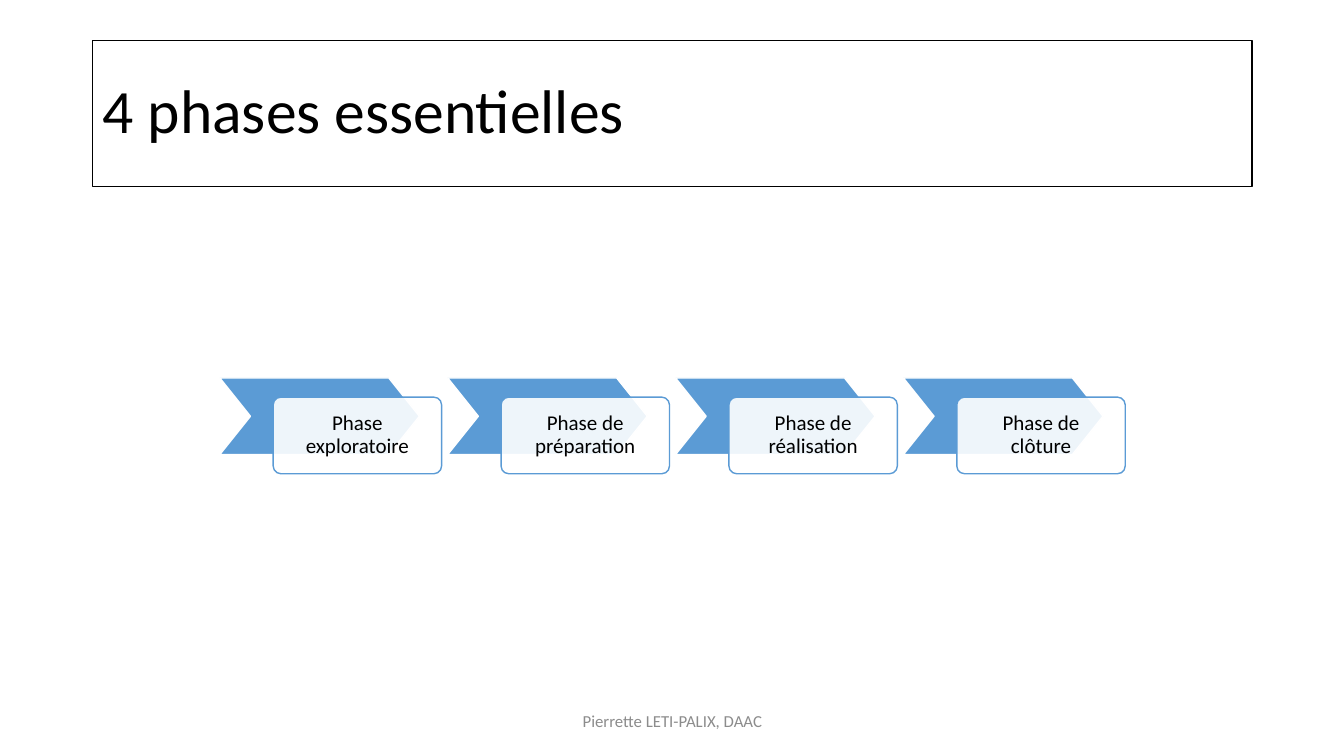
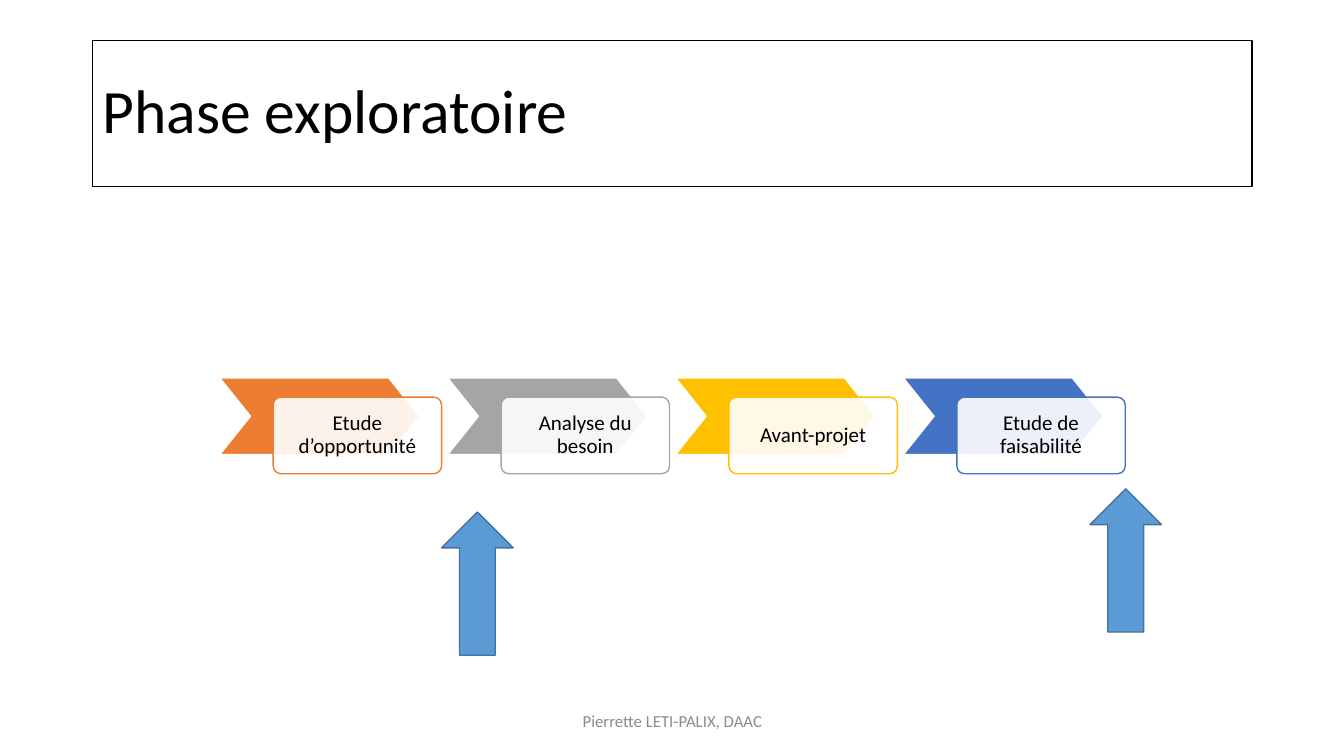
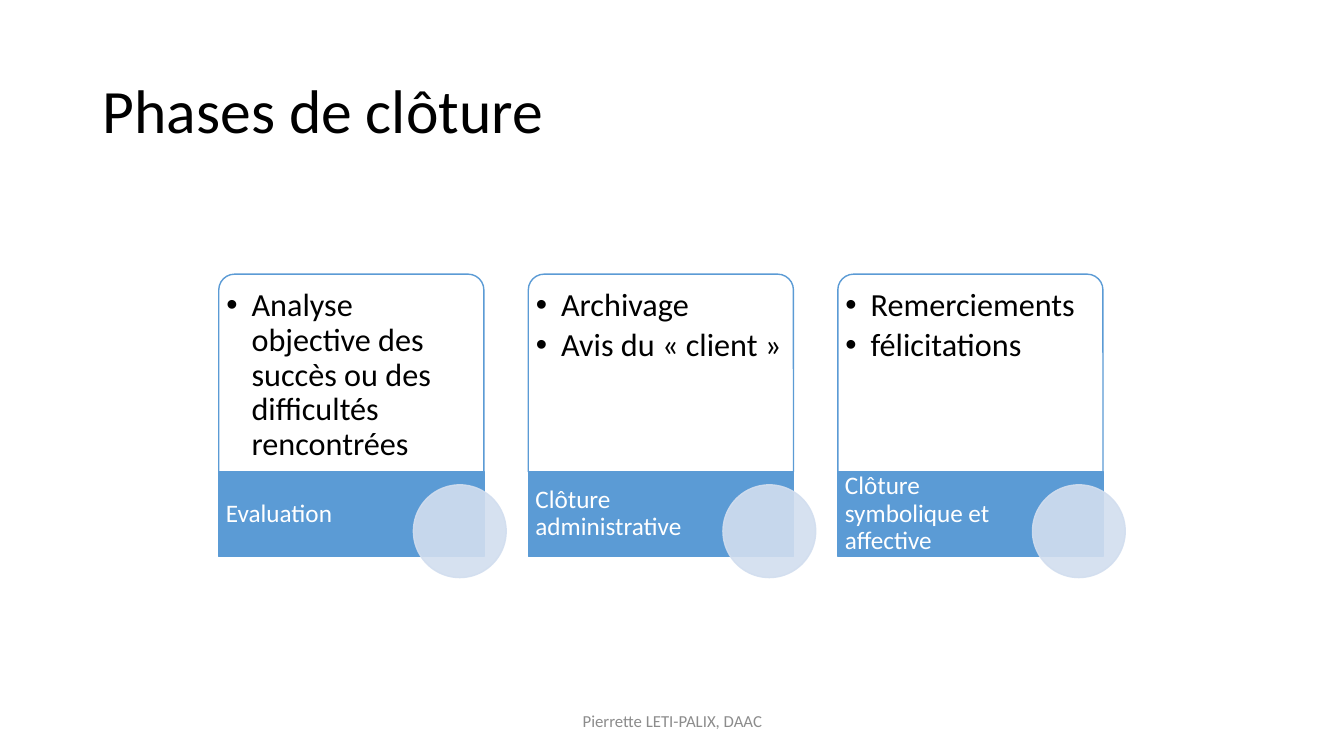
from lxml import etree
from pptx import Presentation
from pptx.dml.color import RGBColor
from pptx.enum.shapes import MSO_SHAPE
from pptx.enum.text import MSO_ANCHOR, PP_ALIGN
from pptx.oxml.ns import qn
from pptx.util import Inches, Pt

RECT = MSO_SHAPE.RECTANGLE
CHEVRON = MSO_SHAPE.CHEVRON
ROUND_RECT = MSO_SHAPE.ROUNDED_RECTANGLE
ROUND_TOP = MSO_SHAPE.ROUND_2_SAME_RECTANGLE
OVAL = MSO_SHAPE.OVAL
UP_ARROW = MSO_SHAPE.UP_ARROW
LEFT, CENTER = PP_ALIGN.LEFT, PP_ALIGN.CENTER
TOP, MIDDLE = MSO_ANCHOR.TOP, MSO_ANCHOR.MIDDLE

BLACK = RGBColor(0x00, 0x00, 0x00)
WHITE = RGBColor(0xFF, 0xFF, 0xFF)
GREY_TEXT = RGBColor(0x8C, 0x8C, 0x8C)
BLUE = RGBColor(0x5B, 0x9B, 0xD5)
DARK_BLUE = RGBColor(0x43, 0x73, 0x9E)
PALE_BLUE = RGBColor(0xD2, 0xDE, 0xEF)
ORANGE = RGBColor(0xED, 0x7D, 0x31)
GREY = RGBColor(0xA5, 0xA5, 0xA5)
GOLD = RGBColor(0xFF, 0xC0, 0x00)
INDIGO = RGBColor(0x44, 0x72, 0xC4)

FONT = "Calibri"
FOOTER = "Pierrette LETI-PALIX, DAAC"
TITLE_BOX = (0.92, 0.4, 11.5, 1.45)
FOOTER_BOX = (4.42, 6.95, 4.5, 0.4)


def set_alpha(fill_format, percent):
    color = fill_format._xPr.find(qn("a:solidFill"))[0]
    etree.SubElement(color, qn("a:alpha")).set("val", str(percent * 1000))


def add_bullet(p, indent):
    pPr = p._p.get_or_add_pPr()
    pPr.set("marL", str(Inches(indent)))
    pPr.set("indent", str(-Inches(indent)))
    etree.SubElement(pPr, qn("a:buFont")).set("typeface", "Arial")
    etree.SubElement(pPr, qn("a:buChar")).set("char", "•")


def write(sp, *lines, size, color=BLACK, align=LEFT, anchor=MIDDLE,
          insets=(0.1, 0.05, 0.1, 0.05), spacing=0.9, after=0, bullet=None):
    """Fill a shape with one paragraph a line; bullet is a hanging indent."""
    tf = sp.text_frame
    tf.word_wrap = True
    tf.vertical_anchor = anchor
    (tf.margin_left, tf.margin_top,
     tf.margin_right, tf.margin_bottom) = map(Inches, insets)
    for i, line in enumerate(lines):
        p = tf.paragraphs[0] if i == 0 else tf.add_paragraph()
        p.alignment = align
        p.line_spacing = spacing
        p.space_after = Pt(after)
        if bullet:
            add_bullet(p, bullet)
        r = p.add_run()
        r.text = line
        r.font.name = FONT
        r.font.size = Pt(size)
        r.font.color.rgb = color


class Deck:
    def __init__(self):
        self.prs = Presentation()
        self.prs.slide_width = Inches(13.33)
        self.prs.slide_height = Inches(7.5)
        self.s = None

    def slide(self, title, framed=True):
        self.s = self.prs.slides.add_slide(self.prs.slide_layouts[6])
        if framed:
            sp = self.shape(RECT, TITLE_BOX, WHITE, BLACK)
        else:
            sp = self.text_box(TITLE_BOX)
        write(sp, title, size=44)
        write(self.text_box(FOOTER_BOX), FOOTER, size=12, color=GREY_TEXT,
              align=CENTER, spacing=1)

    def text_box(self, box):
        return self.s.shapes.add_textbox(*map(Inches, box))

    def shape(self, kind, box, fill, line, adj=(), alpha=None, line_alpha=None):
        sp = self.s.shapes.add_shape(kind, *map(Inches, box))
        sp.shadow.inherit = False
        sp.fill.solid()
        sp.fill.fore_color.rgb = fill
        sp.line.color.rgb = line
        sp.line.width = Pt(1)
        for i, value in enumerate(adj):
            sp.adjustments[i] = value
        if alpha:
            set_alpha(sp.fill, alpha)
        if line_alpha:
            set_alpha(sp.line.fill, line_alpha)
        return sp

    def process(self, steps, left=2.18, top=3.75, pitch=2.26):
        """Draw a row of chevrons, each with an overlapping label."""
        for i, (label, color) in enumerate(steps):
            x = left + i * pitch
            self.shape(CHEVRON, (x, top, 1.98, 0.76), color, WHITE, adj=[0.4])
            sp = self.shape(ROUND_RECT, (x + 0.53, top + 0.19, 1.67, 0.76),
                            WHITE, color, adj=[0.1], alpha=90)
            write(sp, label, size=15, align=CENTER, insets=[0.12] * 4)

    def up_arrow(self, left, top):
        self.shape(UP_ARROW, (left, top, 0.71, 1.42), BLUE, DARK_BLUE)

    def cards(self, cards, left=2.17, top=2.72, pitch=3.07):
        """Draw bulleted cards, each with a caption band and a disc."""
        width, body, band = 2.63, 1.96, 0.84
        for i, (caption, items) in enumerate(cards):
            x, band_top = left + i * pitch, top + body
            sp = self.shape(ROUND_TOP, (x, top, width, body), WHITE, BLUE,
                            adj=[0.08, 0], alpha=90)
            write(sp, *items, size=23, anchor=TOP, after=3.5, bullet=0.25,
                  insets=(0.03, 0.1, 0.03, 0.03))
            sp = self.shape(RECT, (x, band_top, width, band), BLUE, BLUE)
            write(sp, caption, size=18, color=WHITE, insets=(0.07, 0, 0.81, 0))
            self.shape(OVAL, (x + 1.93, band_top + 0.13, 0.92, 0.92),
                       PALE_BLUE, PALE_BLUE, alpha=90, line_alpha=90)


def main():
    deck = Deck()

    deck.slide("4 phases essentielles")
    phases = ["Phase exploratoire", "Phase de préparation",
              "Phase de réalisation", "Phase de clôture"]
    deck.process([(phase, BLUE) for phase in phases])

    deck.slide("Phase exploratoire")
    deck.process([("Etude d’opportunité", ORANGE),
                  ("Analyse du besoin", GREY),
                  ("Avant-projet", GOLD),
                  ("Etude de faisabilité", INDIGO)])
    deck.up_arrow(4.38, 5.08)
    deck.up_arrow(10.81, 4.85)

    deck.slide("Phases de clôture", framed=False)
    deck.cards([
        ("Evaluation",
         ["Analyse objective des succès ou des difficultés rencontrées"]),
        ("Clôture administrative", ["Archivage", "Avis du « client »"]),
        ("Clôture symbolique et affective",
         ["Remerciements", "félicitations"]),
    ])

    deck.prs.save("out.pptx")


if __name__ == "__main__":
    main()
